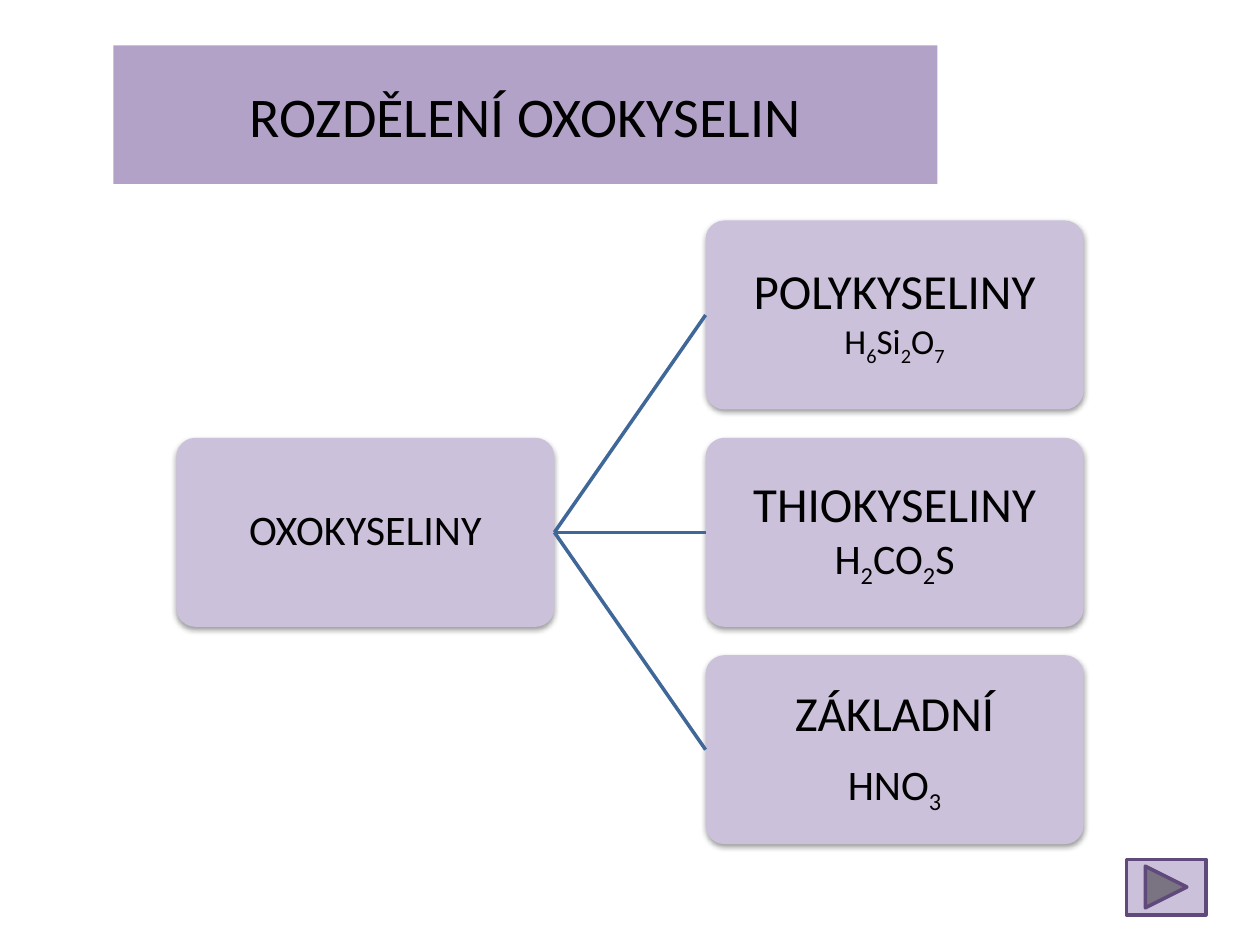
from dataclasses import dataclass
from itertools import groupby

from lxml.etree import SubElement
from pptx import Presentation
from pptx.dml.color import RGBColor
from pptx.enum.shapes import MSO_CONNECTOR, MSO_SHAPE
from pptx.enum.text import MSO_ANCHOR, PP_ALIGN
from pptx.oxml import parse_xml
from pptx.oxml.ns import nsdecls, qn
from pptx.util import Inches, Pt


@dataclass(frozen=True)
class Theme:
    """Colours, type sizes and line width of the slide."""
    font: str = "Calibri"
    ink: RGBColor = RGBColor(0, 0, 0)
    banner: RGBColor = RGBColor(0xB3, 0xA2, 0xC7)
    card: RGBColor = RGBColor(0xCC, 0xC1, 0xDA)
    branch: RGBColor = RGBColor(0x3F, 0x67, 0x97)
    button_edge: RGBColor = RGBColor(0x60, 0x4A, 0x7B)
    title: int = 32
    heading: int = 28
    formula: int = 24
    small_formula: int = 20
    line: int = 2


THEME = Theme()
ROOT = [[("OXOKYSELINY", THEME.formula)]]
KINDS = [
    [[("POLYKYSELINY ", THEME.heading), ("H6Si2O7", THEME.small_formula)]],
    [[("THIOKYSELINY ", THEME.heading), ("H2CO2S", THEME.formula)]],
    [[("ZÁKLADNÍ", THEME.heading)], [("HNO3", THEME.formula)]],
]
CARD_WIDTH, CARD_HEIGHT, ROW_STEP = 3, 1.5, 1.725
SHADOW = (
    f'<a:effectLst {nsdecls("a")}><a:outerShdw blurRad="40000" dist="20000" '
    'dir="5400000" rotWithShape="0"><a:srgbClr val="000000">'
    '<a:alpha val="38000"/></a:srgbClr></a:outerShdw></a:effectLst>'
)


def add_block(slide, preset, box, fill):
    """Add a filled shape without outline or shadow in the given box."""
    block = slide.shapes.add_shape(preset, *map(Inches, box))
    block.shadow.inherit = False
    block.fill.solid()
    block.fill.fore_color.rgb = fill
    block.line.fill.background()
    return block


def write(block, paragraphs, margin, line_spacing):
    """Fill a block with centred paragraphs, lowering the digits of formulas."""
    frame = block.text_frame
    layout = dict.fromkeys(
        ("margin_left", "margin_right", "margin_top", "margin_bottom"), Inches(margin)
    )
    layout |= {"word_wrap": True, "vertical_anchor": MSO_ANCHOR.MIDDLE}
    for attribute, value in layout.items():
        setattr(frame, attribute, value)
    for index, parts in enumerate(paragraphs):
        paragraph = frame.add_paragraph() if index else frame.paragraphs[0]
        paragraph.alignment = PP_ALIGN.CENTER
        paragraph.line_spacing = line_spacing
        if index < len(paragraphs) - 1:
            paragraph.space_after = Pt(0.35 * parts[0][1])
        for text, size in parts:
            for is_subscript, letters in groupby(text, str.isdigit):
                run = paragraph.add_run()
                run.text = "".join(letters)
                style = {"name": THEME.font, "size": Pt(size)}
                for attribute, value in style.items():
                    setattr(run.font, attribute, value)
                run.font.color.rgb = THEME.ink
                if is_subscript:
                    run._r.get_or_add_rPr().set("baseline", "-25000")


def add_title(slide, box):
    """Place the title banner."""
    banner = add_block(slide, MSO_SHAPE.RECTANGLE, box, THEME.banner)
    write(banner, [[("ROZDĚLENÍ OXOKYSELIN", THEME.title)]], 0.1, 1)


def add_card(slide, left, top, paragraphs):
    """Place one rounded card with a soft shadow."""
    box = (left, top, CARD_WIDTH, CARD_HEIGHT)
    card = add_block(slide, MSO_SHAPE.ROUNDED_RECTANGLE, box, THEME.card)
    card.adjustments[0] = 0.1
    properties = card._element.spPr
    properties.replace(properties.find(qn("a:effectLst")), parse_xml(SHADOW))
    write(card, paragraphs, 0.02, 0.9)
    return card


def add_branch(slide, parent, child):
    """Join the right side of the parent to the left side of the child."""
    branch = slide.shapes.add_connector(MSO_CONNECTOR.STRAIGHT, 0, 0, 0, 0)
    branch.begin_connect(parent, 3)
    branch.end_connect(child, 1)
    branch.line.color.rgb = THEME.branch
    branch.line.width = Pt(THEME.line)
    SubElement(branch._element.spPr, qn("a:effectLst"))


def add_tree(slide, box):
    """Place the root card and its kinds in the given box."""
    left, top, width, height = box
    root = add_card(slide, left, top + (height - CARD_HEIGHT) / 2, ROOT)
    for row, paragraphs in enumerate(KINDS):
        kind = add_card(
            slide, left + width - CARD_WIDTH, top + row * ROW_STEP, paragraphs
        )
        add_branch(slide, root, kind)


def add_next_button(slide, box):
    """Place the forward button."""
    button = add_block(
        slide, MSO_SHAPE.ACTION_BUTTON_FORWARD_OR_NEXT, box, THEME.card
    )
    button.line.color.rgb = THEME.button_edge
    button.line.width = Pt(THEME.line)


def main():
    """Build the slide and save it."""
    deck = Presentation()
    deck.slide_width, deck.slide_height = Inches(10), Inches(7.5)
    slide = deck.slides.add_slide(deck.slide_layouts[6])
    add_title(slide, (0.9, 0.36, 6.54, 1.1))
    add_tree(slide, (1.4, 1.75, 7.2, 4.95))
    add_next_button(slide, (8.94, 6.82, 0.63, 0.44))
    deck.save("out.pptx")


if __name__ == "__main__":
    main()
